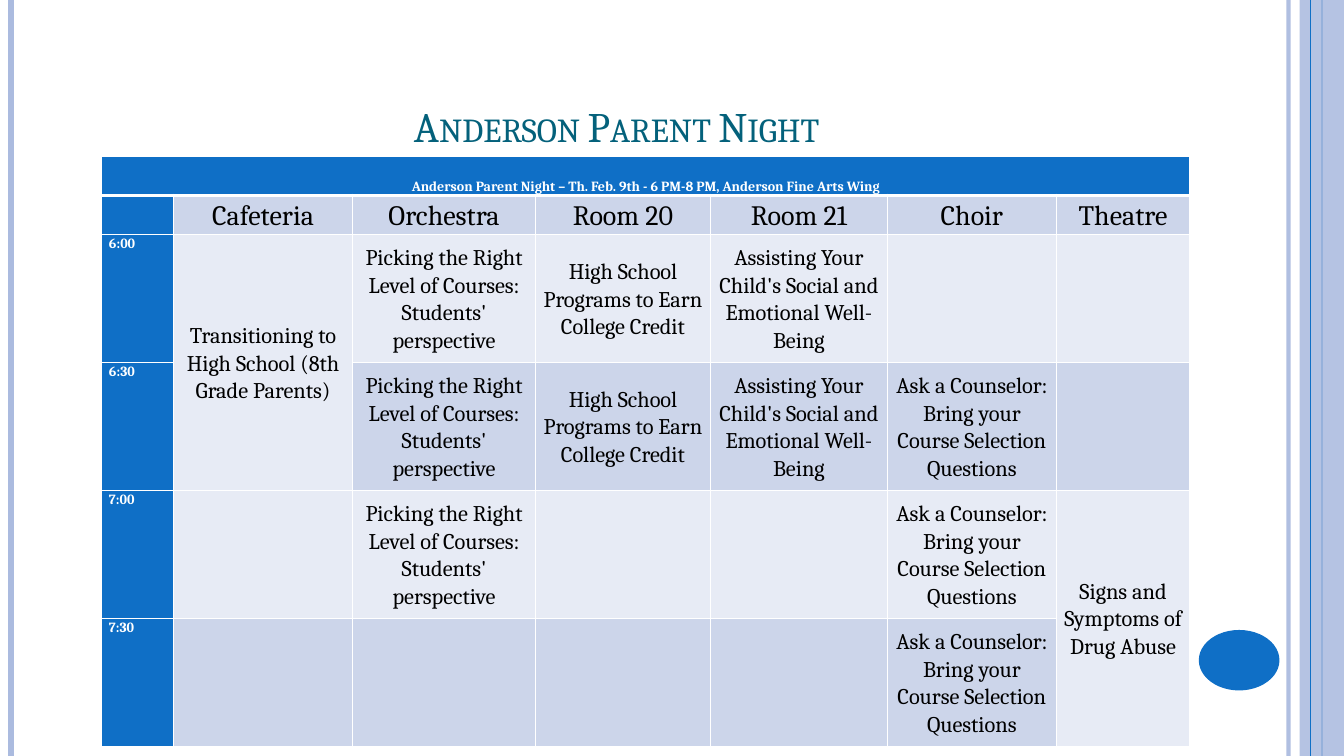
from lxml import etree
from pptx import Presentation
from pptx.dml.color import RGBColor
from pptx.enum.shapes import MSO_CONNECTOR, MSO_SHAPE
from pptx.enum.text import MSO_ANCHOR, PP_ALIGN
from pptx.oxml.ns import qn
from pptx.util import Inches, Pt

STRAIGHT = MSO_CONNECTOR.STRAIGHT
RECTANGLE, OVAL = MSO_SHAPE.RECTANGLE, MSO_SHAPE.OVAL
TOP, MIDDLE, BOTTOM = MSO_ANCHOR.TOP, MSO_ANCHOR.MIDDLE, MSO_ANCHOR.BOTTOM
LEFT, CENTER = PP_ALIGN.LEFT, PP_ALIGN.CENTER

BLUE = RGBColor(0x0F, 0x6F, 0xC6)
LAVENDER = RGBColor(0xAB, 0xBB, 0xDF)
TEAL = RGBColor(0x04, 0x61, 0x7B)
WHITE = RGBColor(0xFF, 0xFF, 0xFF)
BLACK = RGBColor(0, 0, 0)
DARK_BAND = RGBColor(0xCC, 0xD5, 0xEA)
LIGHT_BAND = RGBColor(0xE7, 0xEB, 0xF5)

FONT = "Cambria"
SLIDE_WIDTH, SLIDE_HEIGHT = 13.33, 7.5
TITLE_BOX = (0.67, 0.3, 10.89, 1.25)
TABLE_BOX = (1.01, 1.55, 10.79, 5.86)
COLUMN_WIDTHS = [0.71, 1.78, 1.81, 1.74, 1.75, 1.68, 1.32]
ROW_HEIGHTS = [0.39] * 2 + [1.27] * 4

BANNER = "Anderson Parent Night – Th. Feb. 9th - 6 PM-8 PM, Anderson Fine Arts Wing"
COURSES = "Picking the Right Level of Courses: Students' perspective"
PROGRAMS = "High School Programs to Earn College Credit"
WELL_BEING = "Assisting Your Child's Social and Emotional Well-Being"
COUNSELOR = "Ask a Counselor: Bring your Course Selection Questions"
TRANSITION = "Transitioning to High School (8th Grade Parents)"
DRUG_ABUSE = "Signs and Symptoms of Drug Abuse"
SCHEDULE = [
    [BANNER, "", "", "", "", "", ""],
    ["", "Cafeteria", "Orchestra", "Room 20", "Room 21", "Choir", "Theatre"],
    ["6:00", TRANSITION, COURSES, PROGRAMS, WELL_BEING, "", ""],
    ["6:30", "", COURSES, PROGRAMS, WELL_BEING, COUNSELOR, ""],
    ["7:00", "", COURSES, "", "", COUNSELOR, DRUG_ABUSE],
    ["7:30", "", "", "", "", COUNSELOR, ""],
]
MERGES = [((0, 0), (0, 6)), ((2, 1), (3, 1)), ((4, 6), (5, 6))]


def write_text(frame, text, size, color, bold=False, align=CENTER, spacing=1.0, small_caps=False):
    paragraph = frame.paragraphs[0]
    paragraph.alignment = align
    paragraph.line_spacing = spacing
    run = paragraph.add_run()
    run.text = text
    run.font.name = FONT
    run.font.size = Pt(size)
    run.font.bold = bold
    run.font.color.rgb = color
    if small_caps:
        run.font._element.set("cap", "small")


def set_opacity(fill_parent, percent):
    color = fill_parent.find(".//" + qn("a:srgbClr"))
    etree.SubElement(color, qn("a:alpha"), val=str(percent * 1000))


def add_rule(slide, x, color, width, opacity=100):
    rule = slide.shapes.add_connector(STRAIGHT, Inches(x), 0, Inches(x), Inches(SLIDE_HEIGHT))
    rule.line.color.rgb = color
    rule.line.width = Pt(width)
    properties = rule._element.spPr
    if opacity < 100:
        set_opacity(properties, opacity)
    etree.SubElement(properties, qn("a:effectLst"))


def add_solid(slide, kind, box, color, opacity=100):
    shape = slide.shapes.add_shape(kind, *map(Inches, box))
    shape.shadow.inherit = False
    shape.fill.solid()
    shape.fill.fore_color.rgb = color
    shape.line.fill.background()
    if opacity < 100:
        set_opacity(shape._element.spPr, opacity)


def add_frame(slide):
    add_rule(slide, 12.78, LAVENDER, 3, opacity=93)
    add_rule(slide, 0.11, LAVENDER, 4.5)
    add_rule(slide, 13.11, BLUE, 1.5)
    add_solid(slide, RECTANGLE, (12.89, 0, SLIDE_WIDTH - 12.89, SLIDE_HEIGHT), LAVENDER, opacity=87)
    add_rule(slide, 13, BLUE, 0.75)
    add_solid(slide, OVAL, (11.89, 6.25, 0.8, 0.6), BLUE)


def add_title(slide, box):
    frame = slide.shapes.add_textbox(*map(Inches, box)).text_frame
    frame.word_wrap = True
    frame.vertical_anchor = BOTTOM
    write_text(frame, "Anderson Parent Night", 30, TEAL, small_caps=True)


def set_borders(cell, widths):
    properties = cell._tc.get_or_add_tcPr()
    for side, width in widths.items():
        line = etree.SubElement(properties, qn("a:ln" + side), w=str(Pt(width)))
        fill = etree.SubElement(line, qn("a:solidFill"))
        etree.SubElement(fill, qn("a:srgbClr"), val=str(WHITE))


def format_cell(cell, row, column, text):
    is_blue = row == 0 or column == 0
    set_borders(cell, {"L": 1, "R": 1, "T": 3 if row == 1 else 1, "B": 3 if row == 0 else 1})
    cell.fill.solid()
    cell.fill.fore_color.rgb = BLUE if is_blue else DARK_BAND if row % 2 else LIGHT_BAND
    cell.margin_left = cell.margin_right = Inches(0.07)
    cell.margin_top = cell.margin_bottom = 0
    cell.vertical_anchor = BOTTOM if row == 0 else TOP if column == 0 else MIDDLE
    if text:
        write_text(
            cell.text_frame, text,
            size=10 if is_blue else 20 if row == 1 else 16,
            color=WHITE if is_blue else BLACK,
            bold=is_blue,
            align=LEFT if column == 0 and row > 0 else CENTER,
            spacing=1.07,
        )


def add_schedule(slide, box):
    table = slide.shapes.add_table(len(ROW_HEIGHTS), len(COLUMN_WIDTHS), *map(Inches, box)).table
    for column, width in zip(table.columns, COLUMN_WIDTHS):
        column.width = Inches(width)
    for row, height in zip(table.rows, ROW_HEIGHTS):
        row.height = Inches(height)
    for row, texts in enumerate(SCHEDULE):
        for column, text in enumerate(texts):
            format_cell(table.cell(row, column), row, column, text)
    for first, last in MERGES:
        table.cell(*first).merge(table.cell(*last))


def main():
    presentation = Presentation()
    presentation.slide_width = Inches(SLIDE_WIDTH)
    presentation.slide_height = Inches(SLIDE_HEIGHT)
    slide = presentation.slides.add_slide(presentation.slide_layouts[6])
    add_frame(slide)
    add_title(slide, TITLE_BOX)
    add_schedule(slide, TABLE_BOX)
    presentation.save("out.pptx")


if __name__ == "__main__":
    main()
